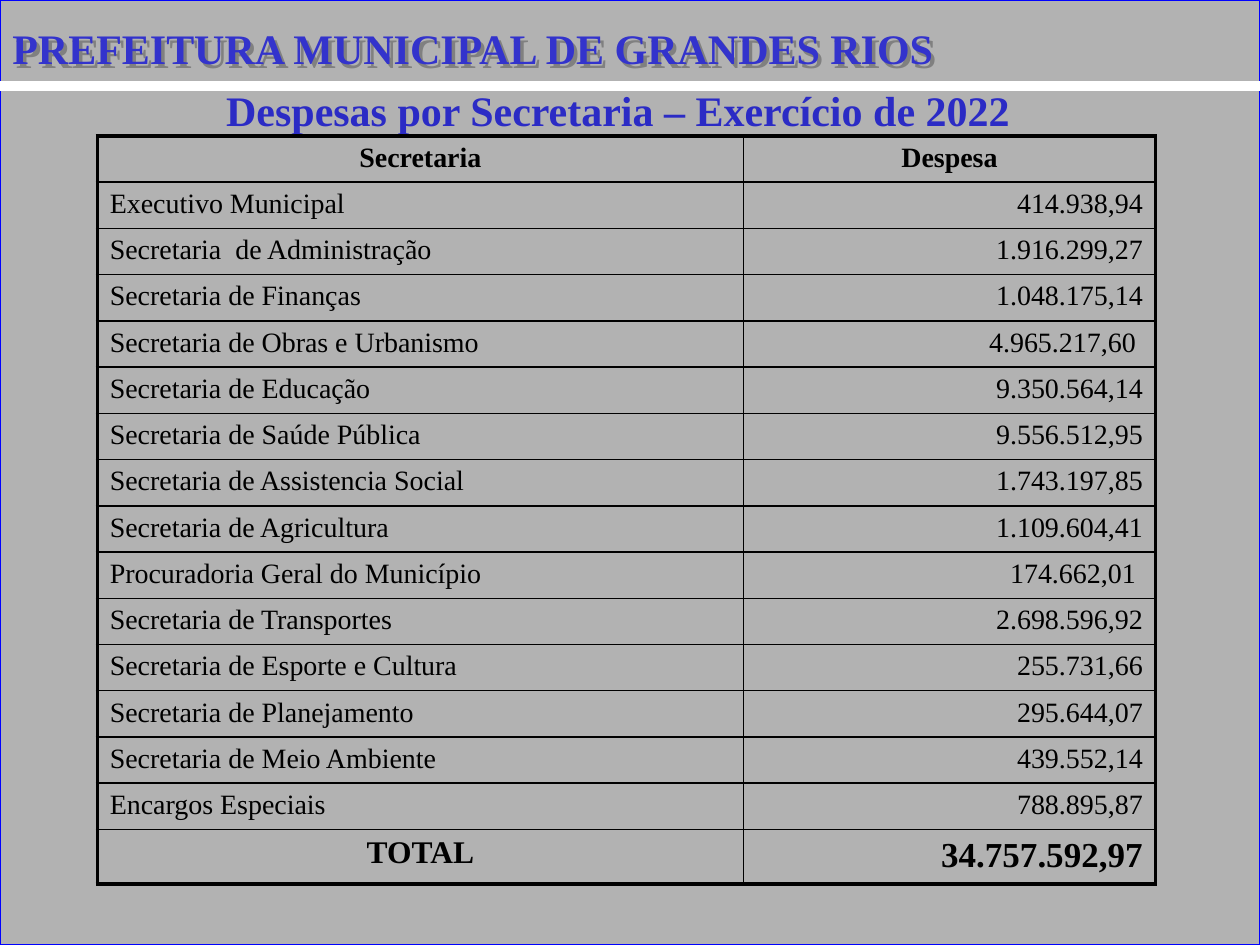
from lxml.etree import SubElement
from pptx import Presentation
from pptx.dml.color import RGBColor
from pptx.enum.shapes import MSO_CONNECTOR, MSO_SHAPE
from pptx.enum.text import MSO_AUTO_SIZE, PP_ALIGN
from pptx.oxml import parse_xml
from pptx.oxml.ns import nsdecls, qn
from pptx.util import Cm, Pt

FONT = "Times New Roman"
ROWS = [
    ("Secretaria", "Despesa"),
    ("Executivo Municipal", "414.938,94"),
    ("Secretaria  de Administração", "1.916.299,27"),
    ("Secretaria de Finanças", "1.048.175,14"),
    ("Secretaria de Obras e Urbanismo", "4.965.217,60 "),
    ("Secretaria de Educação", "9.350.564,14"),
    ("Secretaria de Saúde Pública", "9.556.512,95"),
    ("Secretaria de Assistencia Social", "1.743.197,85"),
    ("Secretaria de Agricultura", "1.109.604,41"),
    ("Procuradoria Geral do Município", "174.662,01 "),
    ("Secretaria de Transportes", "2.698.596,92"),
    ("Secretaria de Esporte e Cultura", "255.731,66"),
    ("Secretaria de Planejamento", "295.644,07"),
    ("Secretaria de Meio Ambiente", "439.552,14"),
    ("Encargos Especiais", "788.895,87"),
    ("TOTAL", "34.757.592,97"),
]


def rgb(value):
    return RGBColor.from_string(value)


def style(p, size, color, bold, align):
    p.alignment = align
    p.font.name = FONT
    p.font.size = Pt(size)
    p.font.bold = bold
    p.font.color.rgb = rgb(color)


prs = Presentation()
prs.slide_width, prs.slide_height = Cm(25.4), Cm(19.05)
s = prs.slides.add_slide(prs.slide_layouts[6])

# Background panel
sp = s.shapes.add_shape(MSO_SHAPE.RECTANGLE, 0, 0, prs.slide_width, prs.slide_height)
sp.shadow.inherit = False
sp.fill.solid()
sp.fill.fore_color.rgb = rgb("B2B2B2")
sp.line.color.rgb = rgb("0000FF")
sp.line.width = Pt(0.75)

# White rule under the heading
rule = s.shapes.add_connector(MSO_CONNECTOR.STRAIGHT, 0, Cm(1.73), prs.slide_width, Cm(1.73))
rule.line.color.rgb = rgb("FFFFFF")
rule.line.width = Pt(6)
SubElement(rule._element.spPr, qn("a:effectLst"))

# Headings
for text, left, top, width, color, align in [
    ("Despesas por Secretaria – Exercício de 2022 ", 0.6, 1.57, 23.93, "2B2BC5", PP_ALIGN.CENTER),
    ("PREFEITURA MUNICIPAL DE GRANDES RIOS", 0, 0.33, 24.1, "3333CC", PP_ALIGN.LEFT),
]:
    sp = s.shapes.add_textbox(Cm(left), Cm(top), Cm(width), Cm(1.27))
    tf = sp.text_frame
    tf.word_wrap = True
    tf.auto_size = MSO_AUTO_SIZE.SHAPE_TO_FIT_TEXT
    p = tf.paragraphs[0]
    p.add_run().text = text
    style(p, 24, color, True, align)

# The unfilled box of the last heading casts its shadow from the letters
sp._element.spPr.append(parse_xml(
    f'<a:effectLst {nsdecls("a")}><a:outerShdw dist="35921" dir="2700000" algn="ctr" '
    'rotWithShape="0"><a:srgbClr val="808080"/></a:outerShdw></a:effectLst>'))

# Expense table
last = len(ROWS) - 1
frame = s.shapes.add_table(len(ROWS), 2, Cm(1.96), Cm(2.74), Cm(21.33), Cm(15.05))
table = frame.table
table.first_row = table.horz_banding = False
table.columns[0].width, table.columns[1].width = Cm(13.03), Cm(8.3)

for i, texts in enumerate(ROWS):
    table.rows[i].height = Cm(1.1 if i == last else 0.93)
    for j, text in enumerate(texts):
        cell = table.cell(i, j)
        cell.fill.background()
        p = cell.text_frame.paragraphs[0]
        p.add_run().text = text
        if i == 0 or (i == last and j == 0):
            align = PP_ALIGN.CENTER
        else:
            align = PP_ALIGN.RIGHT if j else PP_ALIGN.LEFT
        size = (18, 20)[j] if i == last else 16
        style(p, size, "000000", i in (0, last), align)

        # Thick borders around the table, thin ones inside
        sides = [("lnL", j == 0), ("lnR", j == 1), ("lnT", i == 0), ("lnB", i == last)]
        for n, (side, outer) in enumerate(sides):
            width = Pt(2.25 if outer else 1)
            cell._tc.tcPr.insert(n, parse_xml(
                f'<a:{side} {nsdecls("a")} w="{width}"><a:solidFill>'
                f'<a:srgbClr val="000000"/></a:solidFill></a:{side}>'))

prs.save("out.pptx")
